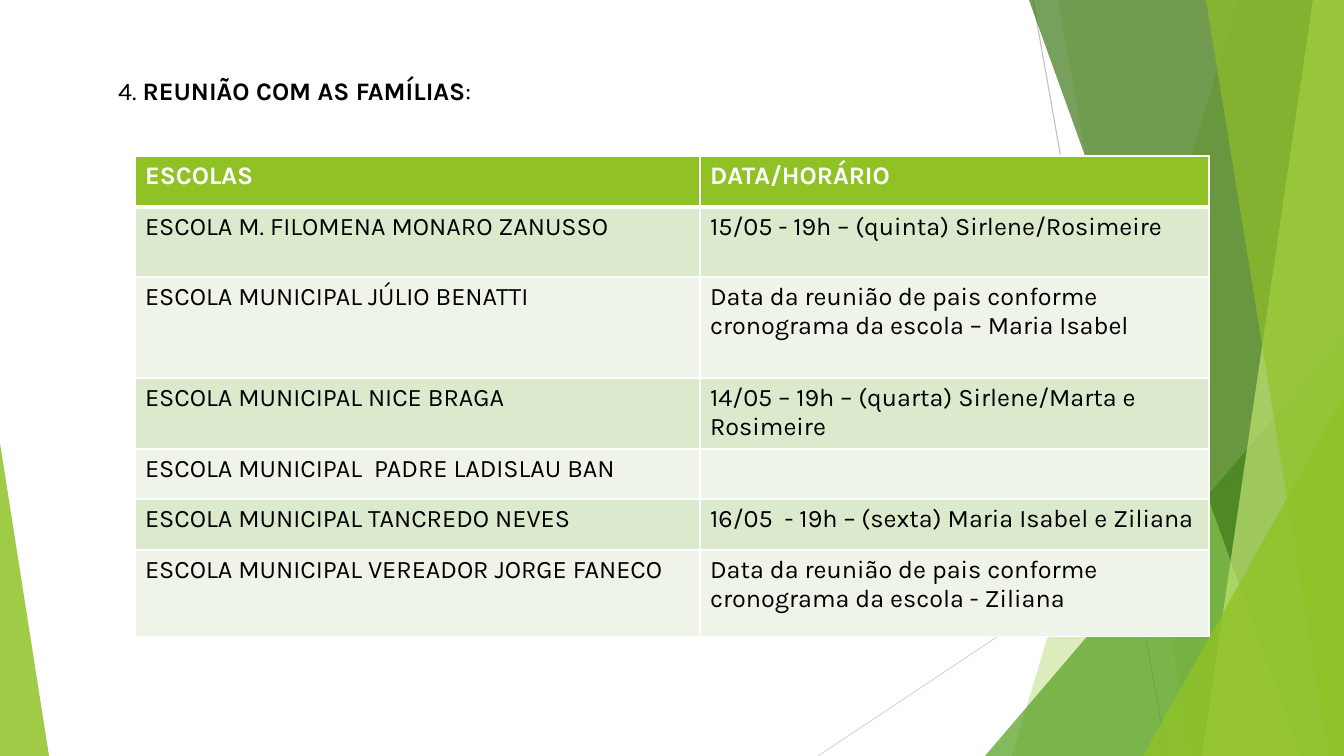
from lxml import etree
from pptx import Presentation, util as u
from pptx.dml.color import RGBColor
from pptx.enum import shapes, text
from pptx.oxml.ns import qn

WHITE = RGBColor(0xFF, 0xFF, 0xFF)
BLACK = RGBColor(0, 0, 0)
GRAY = RGBColor(0xBF, 0xBF, 0xBF)
PALE = RGBColor(0xD9, 0xD9, 0xD9)
LIME = RGBColor(0x90, 0xC2, 0x26)
LEAF = RGBColor(0x54, 0xA0, 0x21)
PINE = RGBColor(0x3F, 0x78, 0x19)
MINT = RGBColor(0xC0, 0xE4, 0x74)
BANDS = RGBColor(0xEE, 0xF4, 0xE8), RGBColor(0xDB, 0xE9, 0xCD)

WIDE, HIGH = 1344, 756
UNIT = 12192000 / WIDE


def px(n):
    return u.Emu(round(n * UNIT))


class Page:
    style = {"name": "Karla", "size": u.Pt(18)}

    def __init__(self, deck):
        self.slide = deck.slides.add_slide(deck.slide_layouts[5])
        self.items = self.slide.shapes

    def label(self, para, words, **look):
        run = para.add_run()
        run.text = words
        for key, value in {**self.style, "bold": False, **look}.items():
            if key == "color":
                run.font.color.rgb = value
            else:
                setattr(run.font, key, value)

    def title(self, box, runs):
        head = self.items.title
        for key, value in zip(("left", "top", "width", "height"), box):
            setattr(head, key, px(value))
        frame = head.text_frame
        look = {"word_wrap": False, "vertical_anchor": text.MSO_ANCHOR.TOP,
                "auto_size": text.MSO_AUTO_SIZE.SHAPE_TO_FIT_TEXT}
        for key, value in look.items():
            setattr(frame, key, value)
        para = frame.paragraphs[0]
        para.alignment = text.PP_ALIGN.LEFT
        for words, bold in runs:
            self.label(para, words, bold=bold, color=BLACK)

    def line(self, ends, color):
        item = self.items.add_connector(
            shapes.MSO_CONNECTOR.STRAIGHT, *map(px, ends))
        item.line.color.rgb = color
        item.line.width = u.Pt(0.75)
        etree.SubElement(item._element.spPr, qn("a:effectLst"))

    def paint(self, item, color, alpha):
        item.shadow.inherit = False
        item.fill.solid()
        item.fill.fore_color.rgb = color
        item.line.fill.background()
        tint = next(item._element.spPr.iter(qn("a:srgbClr")))
        etree.SubElement(tint, qn("a:alpha"), val=str(alpha * 1000))

    def shard(self, top, foot, color, alpha):
        form = self.items.build_freeform(px(top), 0)
        corners = (WIDE, 0), (WIDE, HIGH), (foot, HIGH)
        form.add_line_segments([(px(x), px(y)) for x, y in corners])
        self.paint(form.convert_to_shape(), color, alpha)

    def wedge(self, left, top, width, peak, color, alpha):
        item = self.items.add_shape(
            shapes.MSO_SHAPE.ISOSCELES_TRIANGLE,
            *map(px, (left, top, width, HIGH - top)))
        item.adjustments[0] = peak
        self.paint(item, color, alpha)

    def edge(self, cell, side, width):
        line = etree.SubElement(cell._tc.get_or_add_tcPr(),
                                qn("a:ln" + side), w=str(int(u.Pt(width))))
        fill = etree.SubElement(line, qn("a:solidFill"))
        etree.SubElement(fill, qn("a:srgbClr"), val=str(WHITE))

    def table(self, left, top, wides, highs, rows):
        grid = self.items.add_table(
            len(rows), len(wides),
            *map(px, (left, top, sum(wides), sum(highs)))).table
        grid.first_row = grid.horz_banding = False
        for col, wide in zip(grid.columns, wides):
            col.width = px(wide)
        for r, (row, high) in enumerate(zip(rows, highs)):
            grid.rows[r].height = px(high)
            for c, words in enumerate(row):
                cell = grid.cell(r, c)
                thick = {"T": 3 if r == 1 else 1, "B": 1 if r else 3}
                for side in "LRTB":
                    self.edge(cell, side, thick.get(side, 1))
                cell.fill.solid()
                cell.fill.fore_color.rgb = BANDS[r % 2] if r else LIME
                if words:
                    self.label(cell.text_frame.paragraphs[0], words,
                               bold=r == 0, color=BLACK if r else WHITE)


def main():
    deck = Presentation()
    deck.slide_width, deck.slide_height = px(WIDE), px(HIGH)
    page = Page(deck)
    page.line((1033, 0, 1167, HIGH), GRAY)
    page.line((WIDE, 406, 818, HIGH), PALE)
    page.shard(1238, 1012, LIME, 30)
    page.shard(1058, 1192, LIME, 20)
    page.wedge(985, 336, 359, 1, LEAF, 72)
    page.shard(1029, 1301, PINE, 70)
    page.shard(1313, 1202, MINT, 70)
    page.shard(1206, 1329, LIME, 65)
    page.wedge(1143, 396, 201, 1, LIME, 80)
    page.wedge(0, 443, 49, 0, LIME, 85)
    page.title((108, 70, 374, 40), [
        ("4. ", False), ("REUNIÃO COM AS FAMÍLIAS", True), (":", False)])
    page.table(135, 156, (565, 509), (51, 70, 101, 71, 50, 51, 87), [
        ("ESCOLAS", "DATA/HORÁRIO"),
        ("ESCOLA M. FILOMENA MONARO ZANUSSO",
         "15/05 - 19h – (quinta) Sirlene/Rosimeire"),
        ("ESCOLA MUNICIPAL JÚLIO BENATTI",
         "Data da reunião de pais conforme cronograma da escola – Maria Isabel"),
        ("ESCOLA MUNICIPAL NICE BRAGA",
         "14/05 – 19h – (quarta) Sirlene/Marta e Rosimeire"),
        ("ESCOLA MUNICIPAL  PADRE LADISLAU BAN", ""),
        ("ESCOLA MUNICIPAL TANCREDO NEVES",
         "16/05  - 19h – (sexta) Maria Isabel e Ziliana"),
        ("ESCOLA MUNICIPAL VEREADOR JORGE FANECO",
         "Data da reunião de pais conforme cronograma da escola - Ziliana"),
    ])
    deck.save("out.pptx")


if __name__ == "__main__":
    main()
